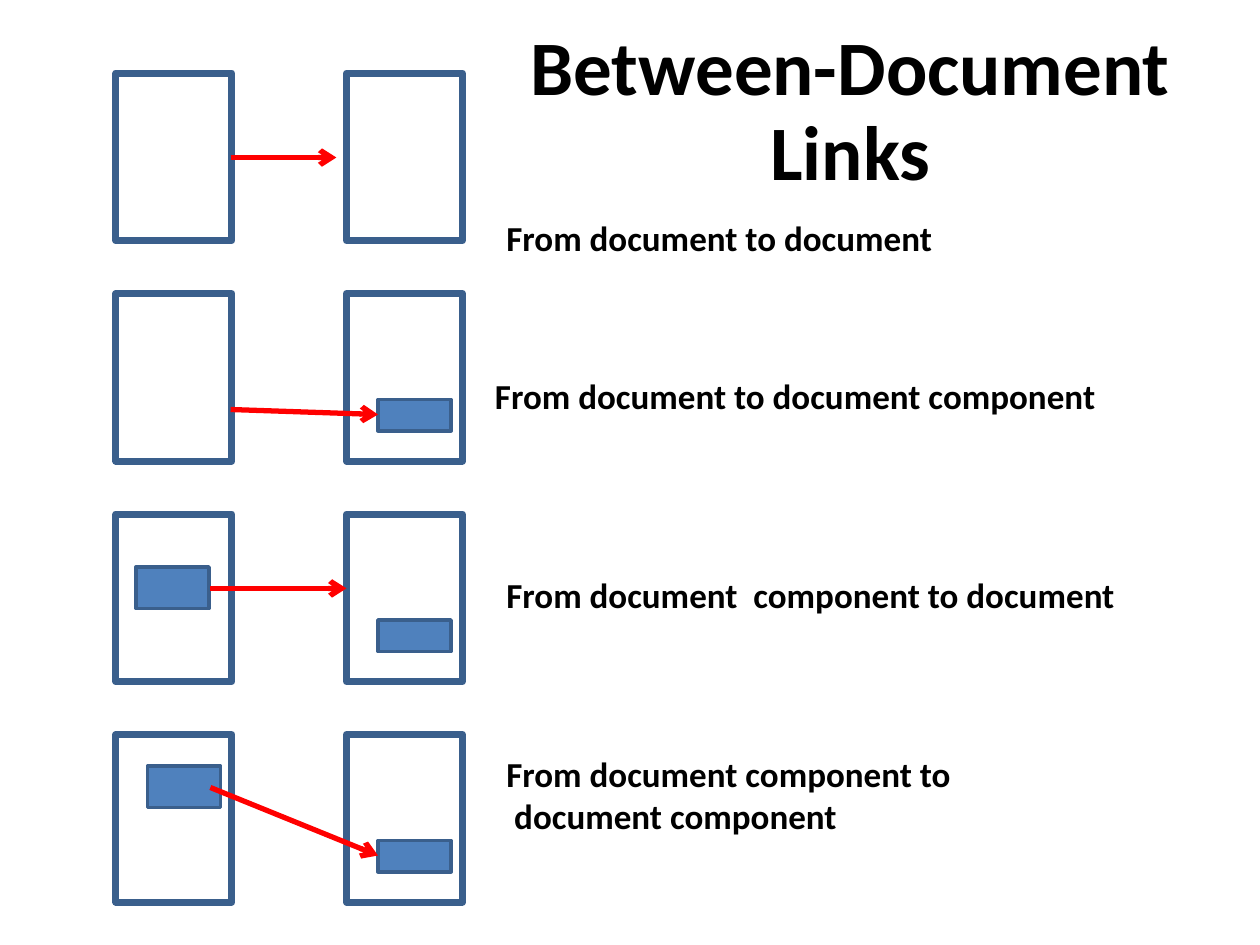
from dataclasses import dataclass

from lxml import etree
from pptx import Presentation
from pptx.dml.color import RGBColor
from pptx.enum.shapes import MSO_CONNECTOR, MSO_SHAPE
from pptx.enum.text import MSO_ANCHOR, MSO_AUTO_SIZE, PP_ALIGN
from pptx.oxml.ns import qn
from pptx.util import Inches, Pt

RECTANGLE = MSO_SHAPE.RECTANGLE
STRAIGHT = MSO_CONNECTOR.STRAIGHT
TOP = MSO_ANCHOR.TOP
FIT_SHAPE = MSO_AUTO_SIZE.SHAPE_TO_FIT_TEXT
NO_FIT = MSO_AUTO_SIZE.NONE
LEFT = PP_ALIGN.LEFT
CENTER = PP_ALIGN.CENTER


@dataclass(frozen=True)
class Theme:
    """Colours, font and type sizes of the slide."""
    outline: RGBColor = RGBColor(0x3A, 0x5F, 0x8C)
    component: RGBColor = RGBColor(0x4F, 0x81, 0xBD)
    arrow: RGBColor = RGBColor(0xFF, 0x00, 0x00)
    text: RGBColor = RGBColor(0x00, 0x00, 0x00)
    font: str = "Calibri"
    title_size: Pt = Pt(44)
    label_size: Pt = Pt(20)
    document_line: Pt = Pt(4)
    component_line: Pt = Pt(2)
    arrow_line: Pt = Pt(3)


THEME = Theme()

FIRST_ROW_TOP = 0.58
ROW_PITCH = 1.75
DOCUMENT_LEFTS = (2.75, 0.92)
DOCUMENT_SIZE = (0.92, 1.33)
SOURCE_SIZE = (0.58, 0.33)
TARGET_SIZE = (0.58, 0.25)
TARGET_OFFSET = (3, 0.84)

LINK_ROWS = (
    {"arrow": (1.83, 0.67, 2.67, 0.67)},
    {"arrow": (1.83, 0.92, 3, 0.96), "target": TARGET_OFFSET},
    {"arrow": (1.67, 0.59, 2.75, 0.59), "target": TARGET_OFFSET, "source": (1.08, 0.42)},
    {"arrow": (1.67, 0.42, 3, 0.96), "target": TARGET_OFFSET, "source": (1.17, 0.25)},
)

LABELS = (
    ("From document to document", (3.92, 1.67, 3.75, 0.44)),
    ("From document to document component", (3.83, 2.92, 5.25, 0.44)),
    ("From document  component to document", (3.92, 4.5, 5.08, 0.44)),
    ("From document component to\n document component", (3.92, 5.92, 5.67, 0.77)),
)


def set_attributes(target, values):
    """Set each named attribute on the target."""
    for name, value in values.items():
        setattr(target, name, value)


def add_rectangle(shapes, position, size, line_width, fill=None):
    """Add an outlined rectangle, hollow unless a fill is given."""
    shape = shapes.add_shape(RECTANGLE, *map(Inches, (*position, *size)))
    shape.shadow.inherit = False
    if fill is None:
        shape.fill.background()
    else:
        shape.fill.solid()
        shape.fill.fore_color.rgb = fill
    shape.line.color.rgb = THEME.outline
    shape.line.width = line_width


def add_arrow(shapes, ends):
    """Add a straight red arrow between two points."""
    connector = shapes.add_connector(STRAIGHT, *map(Inches, ends))
    connector.line.color.rgb = THEME.arrow
    connector.line.width = THEME.arrow_line
    etree.SubElement(connector.line._get_or_add_ln(), qn("a:tailEnd"), type="arrow")
    etree.SubElement(connector._element.spPr, qn("a:effectLst"))


def add_text(slide, text, box, size, frame_format, paragraph_format):
    """Add a bold text box."""
    frame = slide.shapes.add_textbox(*map(Inches, box)).text_frame
    set_attributes(frame, {"word_wrap": True, "vertical_anchor": TOP, **frame_format})
    paragraph = frame.paragraphs[0]
    paragraph.text = text
    set_attributes(paragraph, paragraph_format)
    for run in paragraph.runs:
        set_attributes(run.font, {"name": THEME.font, "size": size, "bold": True})
        run.font.color.rgb = THEME.text


def add_link_row(slide, top, arrow, target=None, source=None):
    """Add two documents, their components and the link between them."""
    shapes = slide.shapes.add_group_shape().shapes
    for left in DOCUMENT_LEFTS:
        add_rectangle(shapes, (left, top), DOCUMENT_SIZE, THEME.document_line)
    for offset, size in ((target, TARGET_SIZE), (source, SOURCE_SIZE)):
        if offset:
            position = (offset[0], top + offset[1])
            add_rectangle(shapes, position, size, THEME.component_line, THEME.component)
    start_x, start_y, end_x, end_y = arrow
    add_arrow(shapes, (start_x, top + start_y, end_x, top + end_y))


def main():
    """Build the slide and save it."""
    presentation = Presentation()
    set_attributes(presentation, {"slide_width": Inches(10), "slide_height": Inches(7.5)})
    slide = presentation.slides.add_slide(presentation.slide_layouts[6])
    for index, row in enumerate(LINK_ROWS):
        add_link_row(slide, FIRST_ROW_TOP + index * ROW_PITCH, **row)
    add_text(slide, "Between-Document Links", (3.75, 0.17, 6, 1.3), THEME.title_size,
             {"auto_size": NO_FIT}, {"alignment": CENTER, "line_spacing": 0.92})
    for text, box in LABELS:
        add_text(slide, text, box, THEME.label_size,
                 {"auto_size": FIT_SHAPE}, {"alignment": LEFT})
    presentation.save("out.pptx")


if __name__ == "__main__":
    main()
